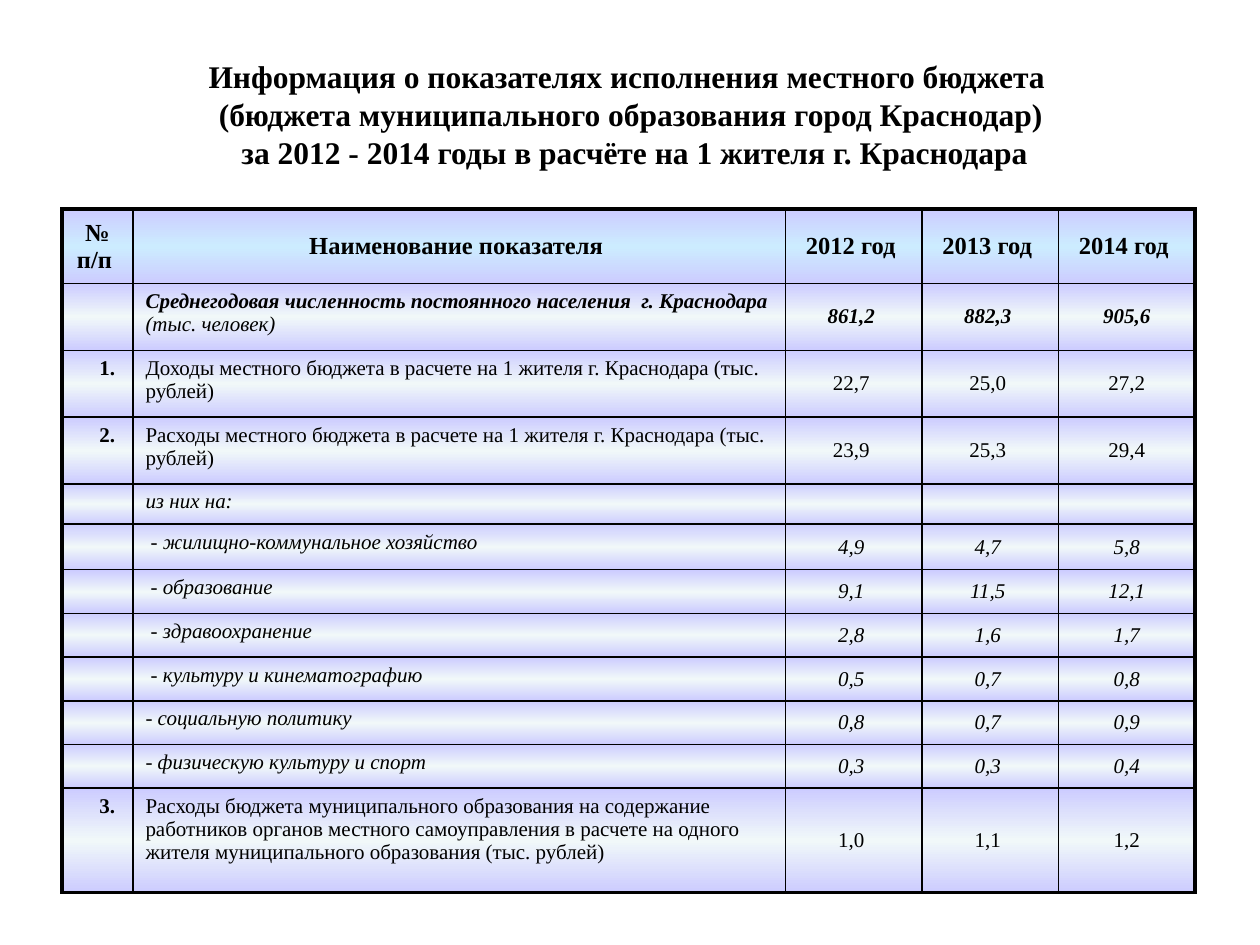
from lxml.etree import SubElement
from pptx import Presentation
from pptx.dml.color import RGBColor
from pptx.enum.text import MSO_ANCHOR, PP_ALIGN
from pptx.oxml.ns import qn
from pptx.util import Pt

BLACK = RGBColor(0x00, 0x00, 0x00)
LAVENDER = RGBColor(0xCC, 0xCC, 0xFF)
SKY = RGBColor(0xCC, 0xEC, 0xFF)
MIST = RGBColor(0xF1, 0xF8, 0xF9)

TITLE = (
    "Информация о показателях исполнения местного бюджета \v"
    "(бюджета муниципального образования город Краснодар)\v"
    " за 2012 - 2014 годы в расчёте на 1 жителя г. Краснодара"
)
HEADINGS = ["№ п/п ", "Наименование показателя ", "2012 год ", "2013 год ", "2014 год "]
POPULATION = "Среднегодовая численность постоянного населения  г. Краснодара "
POPULATION_UNIT = "(тыс. человек)"
PER_RESIDENT = "местного бюджета в расчете на 1 жителя г. Краснодара (тыс. рублей)"
STAFF_COSTS = (
    "Расходы бюджета муниципального образования на содержание работников "
    "органов местного самоуправления в расчете на одного жителя "
    "муниципального образования (тыс. рублей)"
)

PLAIN = {"bold": False, "italic": False}
BOLD = {"bold": True, "italic": False}
ITALIC = {"bold": False, "italic": True}
BOLD_ITALIC = {"bold": True, "italic": True}

INDICATORS = [
    ("", [(POPULATION, BOLD_ITALIC), (POPULATION_UNIT, ITALIC)],
     ["861,2 ", "882,3 ", "905,6"], BOLD_ITALIC),
    ("1. ", [("Доходы " + PER_RESIDENT, PLAIN)], ["22,7 ", "25,0 ", "27,2"], PLAIN),
    ("2. ", [("Расходы " + PER_RESIDENT, PLAIN)], ["23,9 ", "25,3 ", "29,4"], PLAIN),
    ("", [("из них на:", ITALIC)], ["", "", ""], ITALIC),
    ("", [(" - жилищно-коммунальное хозяйство", ITALIC)], ["4,9 ", "4,7 ", "5,8"], ITALIC),
    ("", [(" - образование", ITALIC)], ["9,1 ", "11,5 ", "12,1"], ITALIC),
    ("", [(" - здравоохранение", ITALIC)], ["2,8 ", "1,6 ", "1,7"], ITALIC),
    ("", [(" - культуру и кинематографию", ITALIC)], ["0,5 ", "0,7 ", "0,8"], ITALIC),
    ("", [("- социальную политику", ITALIC)], ["0,8 ", "0,7 ", "0,9"], ITALIC),
    ("", [("- физическую культуру и спорт", ITALIC)], ["0,3 ", "0,3 ", "0,4"], ITALIC),
    ("3. ", [(STAFF_COSTS, PLAIN)], ["1,0 ", "1,1 ", "1,2"], PLAIN),
]
COLUMN_WIDTHS = [40.5, 373, 78, 78, 78]
ROW_HEIGHTS = [42.5] + [38.2] * 3 + [23, 26] + [25] * 5 + [59.5]


class BudgetSlide:
    font_name = "Times New Roman"
    title_size, heading_size, body_size = 18, 14, 12
    inner_line, outer_line = 1, 2.25

    def __init__(self, slide):
        self.slide = slide

    def style_run(self, run, size, emphasis):
        text_format = {"name": self.font_name, "size": Pt(size), **emphasis}
        for attribute, value in text_format.items():
            setattr(run.font, attribute, value)
        run.font.color.rgb = BLACK

    def title(self, text, left, top, width, height):
        frame = self.slide.shapes.add_textbox(
            Pt(left), Pt(top), Pt(width), Pt(height)).text_frame
        frame.word_wrap = True
        frame.vertical_anchor = MSO_ANCHOR.MIDDLE
        paragraph = frame.paragraphs[0]
        paragraph.text = text
        paragraph.alignment = PP_ALIGN.CENTER
        for run in paragraph.runs:
            self.style_run(run, self.title_size, BOLD)

    def table(self, left, top, widths, heights):
        table = self.slide.shapes.add_table(
            len(heights), len(widths), Pt(left), Pt(top),
            Pt(sum(widths)), Pt(sum(heights))).table
        table.first_row = table.horz_banding = False
        for column, width in zip(table.columns, widths):
            column.width = Pt(width)
        for row, height in zip(table.rows, heights):
            row.height = Pt(height)
        return table

    def cell_text(self, cell, parts, size, alignment, anchor, space_before):
        cell.vertical_anchor = anchor
        paragraph = cell.text_frame.paragraphs[0]
        paragraph.alignment = alignment
        paragraph.space_before = Pt(space_before)
        for text, emphasis in parts:
            if text:
                run = paragraph.add_run()
                run.text = text
                self.style_run(run, size, emphasis)
        if not paragraph.runs:
            SubElement(paragraph._p, qn("a:endParaRPr"), sz=str(size * 100))

    def cell_borders(self, cell, on_edge):
        properties = cell._tc.get_or_add_tcPr()
        for side in "LRTB":
            width = self.outer_line if on_edge[side] else self.inner_line
            line = SubElement(properties, qn(f"a:ln{side}"), w=str(Pt(width)))
            fill = SubElement(line, qn("a:solidFill"))
            SubElement(fill, qn("a:srgbClr"), val=str(BLACK))

    def cell_gradient(self, cell, middle):
        gradient = SubElement(cell._tc.get_or_add_tcPr(), qn("a:gradFill"), rotWithShape="1")
        stops = SubElement(gradient, qn("a:gsLst"))
        for position, color in ((0, LAVENDER), (50, middle), (100, LAVENDER)):
            stop = SubElement(stops, qn("a:gs"), pos=str(position * 1000))
            SubElement(stop, qn("a:srgbClr"), val=str(color))
        SubElement(gradient, qn("a:lin"), ang="5400000", scaled="1")

    def indicators(self, left, top):
        table = self.table(left, top, COLUMN_WIDTHS, ROW_HEIGHTS)
        last_row, last_column = len(ROW_HEIGHTS) - 1, len(COLUMN_WIDTHS) - 1

        for column, heading in enumerate(HEADINGS):
            self.cell_text(table.cell(0, column), [(heading, BOLD)], self.heading_size,
                           PP_ALIGN.CENTER, MSO_ANCHOR.MIDDLE,
                           3.4 if column == last_column else 2.8)

        for row, (number, name, values, emphasis) in enumerate(INDICATORS, 1):
            self.cell_text(table.cell(row, 0), [(number, BOLD)], self.body_size,
                           PP_ALIGN.RIGHT, MSO_ANCHOR.TOP, 2.4)
            self.cell_text(table.cell(row, 1), name, self.body_size,
                           PP_ALIGN.LEFT, MSO_ANCHOR.TOP, 2.4)
            for column, value in enumerate(values, 2):
                self.cell_text(table.cell(row, column), [(value, emphasis)], self.body_size,
                               PP_ALIGN.CENTER, MSO_ANCHOR.MIDDLE,
                               0 if column == last_column else 2.4)

        for row in range(last_row + 1):
            for column in range(last_column + 1):
                cell = table.cell(row, column)
                self.cell_borders(cell, {"L": column == 0, "R": column == last_column,
                                         "T": row == 0, "B": row == last_row})
                self.cell_gradient(cell, SKY if row == 0 else MIST)


def main():
    presentation = Presentation()
    presentation.slide_width, presentation.slide_height = Pt(720), Pt(540)
    budget = BudgetSlide(presentation.slides.add_slide(presentation.slide_layouts[6]))
    budget.title(TITLE, 36.5, 20, 648, 90)
    budget.indicators(35.5, 119.5)
    presentation.save("out.pptx")


if __name__ == "__main__":
    main()
